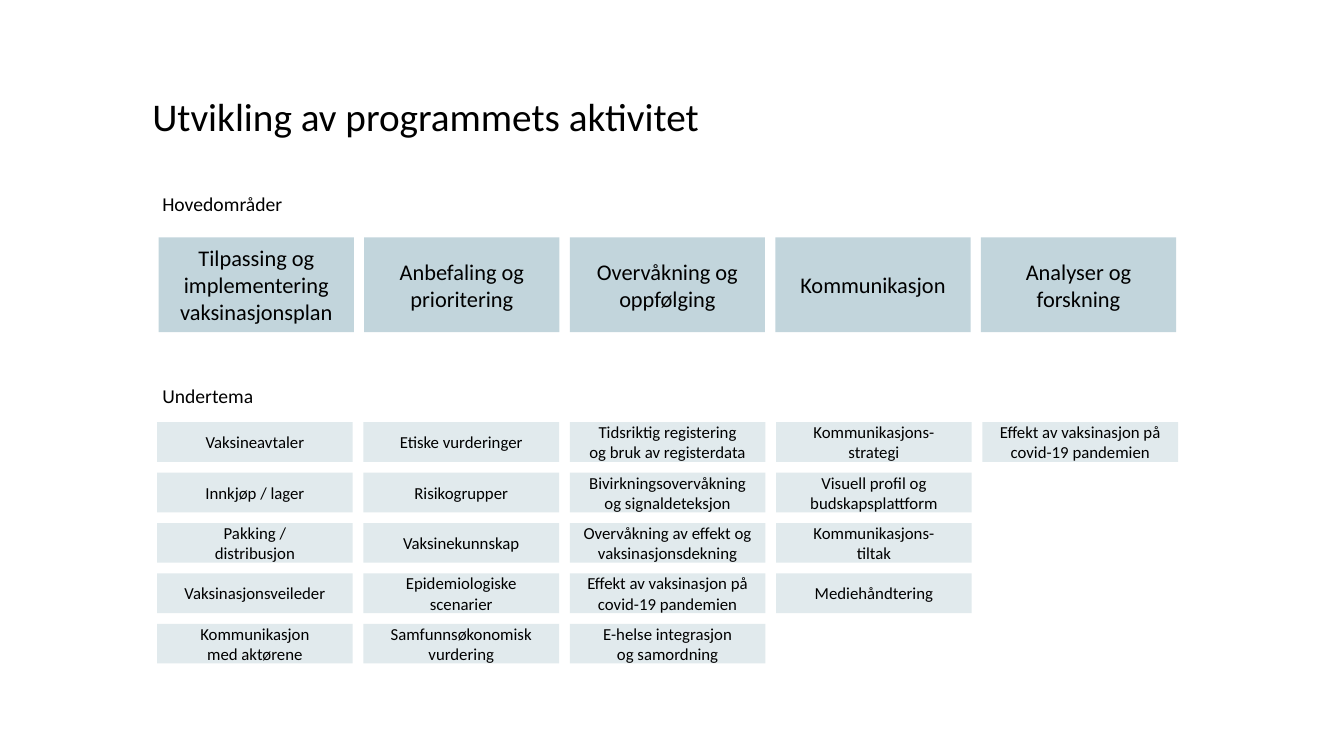
import pptx
import pptx.dml.color
import pptx.enum.shapes
import pptx.enum.text
import pptx.util
from dataclasses import dataclass
from pptx.util import Cm


@dataclass(frozen=True)
class Theme:
    font: str = "Calibri"
    text: str = "000000"
    main_fill: str = "C2D5DC"
    topic_fill: str = "E1EAED"
    title_size: int = 28
    main_size: int = 16
    label_size: int = 14
    topic_size: int = 12


theme = Theme()


def write_text(text_frame, text, size, alignment=None):
    text_frame.word_wrap = True
    text_frame.text = text
    for paragraph in text_frame.paragraphs:
        paragraph.alignment = alignment
        paragraph.font.name = theme.font
        paragraph.font.size = pptx.util.Pt(size)
        paragraph.font.color.rgb = pptx.dml.color.RGBColor.from_string(theme.text)


def add_box(left, top, width, height, text, fill, size):
    shape = slide.shapes.add_shape(
        pptx.enum.shapes.MSO_SHAPE.RECTANGLE, Cm(left), Cm(top), Cm(width), Cm(height))
    shape.shadow.inherit = False
    shape.fill.solid()
    shape.fill.fore_color.rgb = pptx.dml.color.RGBColor.from_string(fill)
    shape.line.fill.background()
    shape.text_frame.vertical_anchor = pptx.enum.text.MSO_ANCHOR.MIDDLE
    write_text(shape.text_frame, text, size, pptx.enum.text.PP_ALIGN.CENTER)


# Each main area with its subtopics
areas = {
    "Tilpassing og implementering vaksinasjonsplan": [
        "Vaksineavtaler", "Innkjøp / lager", "Pakking /\ndistribusjon",
        "Vaksinasjonsveileder", "Kommunikasjon\nmed aktørene"],
    "Anbefaling og prioritering": [
        "Etiske vurderinger", "Risikogrupper", "Vaksinekunnskap",
        "Epidemiologiske\nscenarier", "Samfunnsøkonomisk vurdering"],
    "Overvåkning og oppfølging": [
        "Tidsriktig registering\nog bruk av registerdata",
        "Bivirkningsovervåkning\nog signaldeteksjon",
        "Overvåkning av effekt og vaksinasjonsdekning",
        "Effekt av vaksinasjon på covid-19 pandemien",
        "E-helse integrasjon\nog samordning"],
    "Kommunikasjon": [
        "Kommunikasjons-\nstrategi", "Visuell profil og budskapsplattform",
        "Kommunikasjons-\ntiltak", "Mediehåndtering"],
    "Analyser og forskning": ["Effekt av vaksinasjon på covid-19 pandemien"],
}

presentation = pptx.Presentation()
presentation.slide_width = Cm(33.87)
presentation.slide_height = Cm(19.05)
slide = presentation.slides.add_slide(presentation.slide_layouts[5])

# Title
title = slide.shapes.title
title.left, title.top, title.width, title.height = Cm(3.84), Cm(2.46), Cm(22.28), Cm(1.07)
frame = title.text_frame
frame.margin_left = frame.margin_top = frame.margin_right = frame.margin_bottom = 0
frame.vertical_anchor = pptx.enum.text.MSO_ANCHOR.TOP
write_text(frame, "Utvikling av programmets aktivitet", theme.title_size,
           pptx.enum.text.PP_ALIGN.LEFT)
frame.paragraphs[0].line_spacing = 0.9

# Row labels
for label, top in (("Hovedområder", 4.7), ("Undertema", 9.56)):
    text_box = slide.shapes.add_textbox(Cm(3.84), Cm(top), Cm(11), Cm(0.86))
    write_text(text_box.text_frame, label, theme.label_size)

# Main areas across, subtopics below each
for column, (area, topics) in enumerate(areas.items()):
    add_box(4 + 5.18 * column, 5.98, 4.92, 2.39, area, theme.main_fill, theme.main_size)
    for row, topic in enumerate(topics):
        add_box(3.96 + 5.2 * column, 10.64 + 1.27 * row, 4.93, 1,
                topic, theme.topic_fill, theme.topic_size)

presentation.save("out.pptx")
